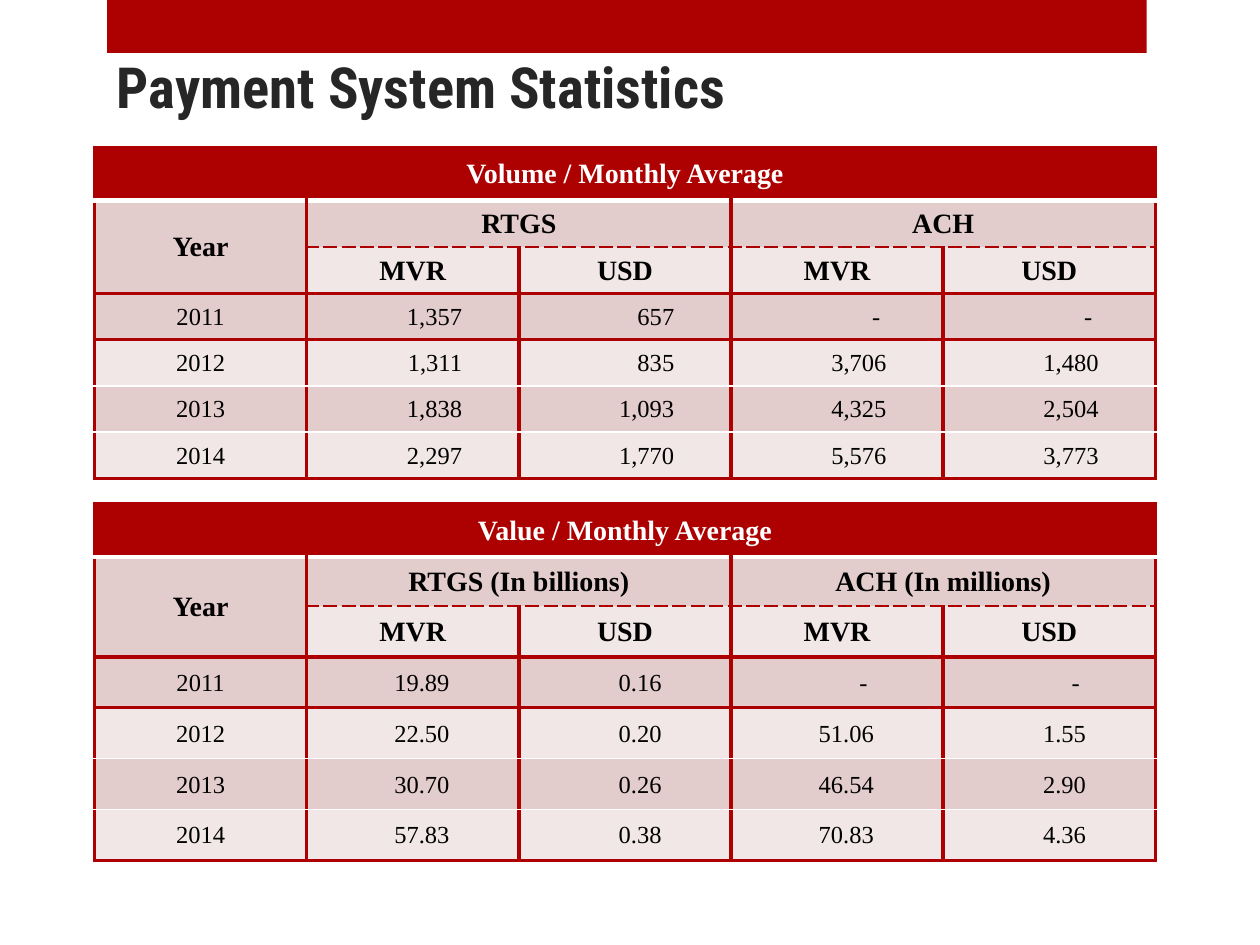
from lxml import etree
from pptx import Presentation
from pptx import util as u
from pptx.dml import color
from pptx.enum import shapes, text
from pptx.oxml import ns

RED, WHITE, BLACK, DARK = "AD0101", "FFFFFF", "000000", "262626"
ROSE, PALE = "E3CCCC", "F1E7E7"
WIDE, THIN, THICK = (RED, 2.25, "solid"), (WHITE, 1, "solid"), (WHITE, 3, "solid")
DASH = (RED, 1, "sysDash")
EDGES = [WIDE, THICK, DASH, WIDE, WIDE, THIN, THIN, WIDE]
FILLS = [RED, ROSE, PALE, ROSE, PALE, ROSE, PALE]
YEARS = ["2011", "2012", "2013", "2014"]
SPANS = [(0, 0, 0, 4), (1, 0, 2, 0), (1, 1, 1, 2), (1, 3, 1, 4)]


def tint(code):
    return color.RGBColor.from_string(code)


class Deck:
    """Holds the style and the current slide."""

    def __init__(self, head="Roboto Condensed", body="Times New Roman"):
        self.head, self.body = head, body
        self.show = Presentation()
        self.show.slide_width, self.show.slide_height = u.Inches(10), u.Inches(7.5)
        self.slide = self.show.slides.add_slide(self.show.slide_layouts[6])

    def font(self, para, face, size, code, bold):
        for run in para.runs:
            run.font.name, run.font.size, run.font.bold = face, u.Pt(size), bold
            run.font.color.rgb = tint(code)

    def bar(self, *box):
        bar = self.slide.shapes.add_shape(
            shapes.MSO_SHAPE.RECTANGLE, *map(u.Inches, box))
        bar.shadow.inherit = False
        bar.fill.solid()
        bar.fill.fore_color.rgb = tint(RED)
        bar.line.fill.background()

    def title(self, words, *box):
        frame = self.slide.shapes.add_textbox(*map(u.Inches, box)).text_frame
        frame.word_wrap = True
        frame.margin_top = frame.margin_bottom = 0
        frame.text = words
        self.font(frame.paragraphs[0], self.head, 32.4, DARK, True)

    def edge(self, cell, side, line):
        code, width, dash = line
        props = cell._tc.get_or_add_tcPr()
        line = etree.SubElement(props, ns.qn("a:ln" + side), w=str(u.Pt(width)))
        fill = etree.SubElement(line, ns.qn("a:solidFill"))
        etree.SubElement(fill, ns.qn("a:srgbClr"), val=code)
        etree.SubElement(line, ns.qn("a:prstDash"), val=dash)

    def cell(self, cell, row, col, words, pad):
        end = row + cell.span_height
        for side, line in zip("LRTB", (WIDE, WIDE, EDGES[row], EDGES[end])):
            self.edge(cell, side, line)
        cell.fill.solid()
        cell.fill.fore_color.rgb = tint(FILLS[row])
        cell.vertical_anchor = text.MSO_ANCHOR.MIDDLE
        cell.margin_left = cell.margin_right = cell.margin_top = u.Inches(0.01)
        cell.margin_bottom = 0
        cell.text_frame.text = words
        para = cell.text_frame.paragraphs[0]
        para.alignment = text.PP_ALIGN.CENTER
        if row > 2 and col:
            para.alignment = text.PP_ALIGN.RIGHT
            cell.margin_right = u.Inches(pad + 0.05 * (words == "-"))
        self.font(para, self.body, 16 if row < 3 else 14,
                  BLACK if row else WHITE, row < 3)

    def table(self, top, high, second, pad, name, groups, values):
        left, wide, first = 0.75, 8.42, 0.42
        rows = [[name] + [""] * 4,
                ["Year", groups[0], "", groups[1], ""],
                ["", "MVR", "USD", "MVR", "USD"]]
        rows += [[year, *line] for year, line in zip(YEARS, values)]
        table = self.slide.shapes.add_table(
            len(rows), 5, *map(u.Inches, (left, top, wide, high))).table
        table.first_row = table.horz_banding = False
        rest = (high - first - second) / 5
        for row, size in zip(table.rows, [first, second] + [rest] * 5):
            row.height = u.Inches(size)
        for r1, c1, r2, c2 in SPANS:
            table.cell(r1, c1).merge(table.cell(r2, c2))
        for row, line in enumerate(rows):
            for col, words in enumerate(line):
                cell = table.cell(row, col)
                if not cell.is_spanned:
                    self.cell(cell, row, col, words, pad)


def main():
    deck = Deck()
    deck.bar(0.85, 0, 8.25, 0.42)
    deck.title("Payment System Statistics", 0.83, 0.41, 7.42, 0.55)
    deck.table(1.17, 2.63, 0.37, 0.45, "Volume / Monthly Average",
               ["RTGS", "ACH"],
               [["1,357", "657", "-", "-"],
                ["1,311", "835", "3,706", "1,480"],
                ["1,838", "1,093", "4,325", "2,504"],
                ["2,297", "1,770", "5,576", "3,773"]])
    deck.table(4, 2.83, 0.39, 0.55, "Value / Monthly Average",
               ["RTGS (In billions)", "ACH (In millions)"],
               [["19.89", "0.16", "-", "-"],
                ["22.50", "0.20", "51.06", "1.55"],
                ["30.70", "0.26", "46.54", "2.90"],
                ["57.83", "0.38", "70.83", "4.36"]])
    deck.show.save("out.pptx")


if __name__ == "__main__":
    main()
